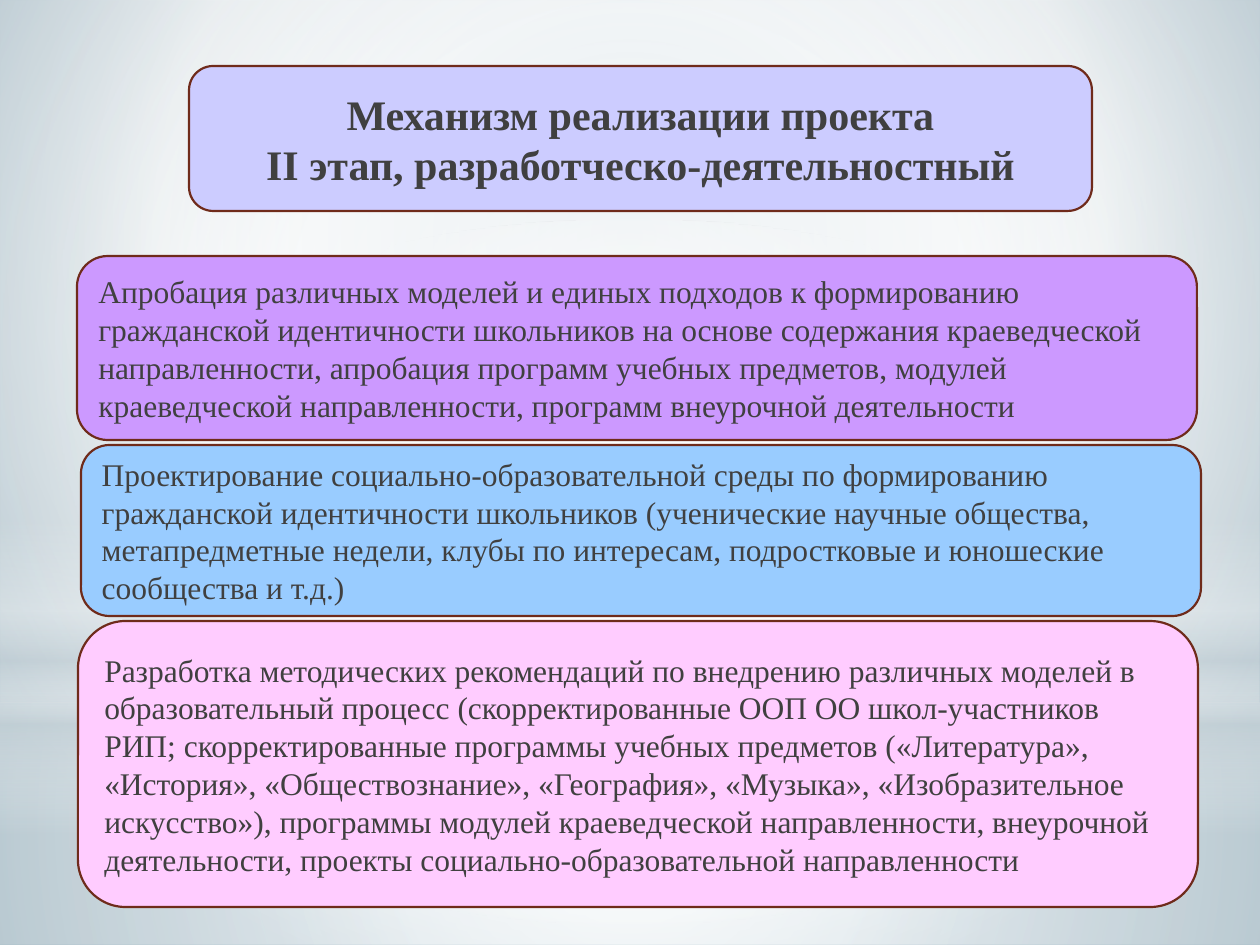
from lxml.etree import SubElement
from pptx import Presentation
from pptx.dml.color import RGBColor
from pptx.enum.shapes import MSO_SHAPE
from pptx.enum.text import MSO_ANCHOR, PP_ALIGN
from pptx.oxml.ns import qn
from pptx.util import Pt

PX = 914400 / 126
W, H = 1260, 945
FONT = "Times New Roman"
COLORS = {
    "text": "404040", "line": "6F2B1B", "title": "CCCCFF",
    "testing": "CC99FF", "design": "99CCFF", "methods": "FFCCFF",
    "white": "FFFFFF", "mist": "C5D1D7", "sky": "B8CAD3", "steel": "8FAEBD",
}
TITLE = ["Механизм реализации проекта", "II этап, разработческо-деятельностный"]
PANELS = [
    ("testing", (77, 256, 1120, 184),
     "Апробация различных моделей и единых подходов к формированию гражданской "
     "идентичности школьников на основе содержания краеведческой направленности, "
     "апробация программ учебных предметов, модулей краеведческой направленности, "
     "программ внеурочной деятельности"),
    ("design", (81, 445, 1120, 171),
     "Проектирование социально-образовательной среды по формированию гражданской "
     "идентичности школьников (ученические научные общества, метапредметные недели, "
     "клубы по интересам, подростковые и юношеские сообщества и т.д.)"),
    ("methods", (78, 621, 1120, 286),
     "Разработка методических рекомендаций по внедрению различных моделей в "
     "образовательный процесс (скорректированные ООП ОО школ-участников РИП; "
     "скорректированные программы учебных предметов («Литература», «История», "
     "«Обществознание», «География», «Музыка», «Изобразительное искусство»), "
     "программы модулей краеведческой направленности, внеурочной деятельности, "
     "проекты социально-образовательной направленности"),
]
CENTER = (50, 50, 50, 50)
# Backdrop layers: shape, box, stops (position, colour, opacity), focus or None for vertical
LAYERS = [
    (MSO_SHAPE.RECTANGLE, (0, 703, W, 242),
     [(0, "white", 91), (37, "white", 76), (100, "mist", 79)], CENTER),
    (MSO_SHAPE.RECTANGLE, (0, 0, W, 703),
     [(0, "white", 89), (48, "white", 62), (100, "mist", 79)], CENTER),
    (MSO_SHAPE.RECTANGLE, (0, 519, W, 315),
     [(0, "white", 0), (29, "white", 30), (45, "mist", 40),
      (55, "white", 26), (65, "mist", 60), (100, "white", 0)], None),
    (MSO_SHAPE.OVAL, (0, 220, W, 703),
     [(0, "white", 100), (56, "white", 0)], CENTER),
]


def px(n):
    return round(n * PX)


def rgb(name):
    return RGBColor.from_string(COLORS[name])


def set_gradient(props, stops, focus):
    """Replace the solid fill in props by a circular or vertical gradient."""
    solid = props.find(qn("a:solidFill"))
    grad = props.makeelement(qn("a:gradFill"), {"rotWithShape": "1"})
    props.replace(solid, grad)
    gs_list = SubElement(grad, qn("a:gsLst"))
    for pos, color, opacity in stops:
        gs = SubElement(gs_list, qn("a:gs"), pos=str(pos * 1000))
        clr = SubElement(gs, qn("a:srgbClr"), val=COLORS[color])
        if opacity < 100:
            SubElement(clr, qn("a:alpha"), val=str(opacity * 1000))
    if focus:
        circle = SubElement(grad, qn("a:path"))
        circle.set("path", "circle")
        sides = {k: str(v * 1000) for k, v in zip("ltrb", focus)}
        SubElement(circle, qn("a:fillToRect"), sides)
    else:
        SubElement(grad, qn("a:lin"), ang="5400000", scaled="0")


def add_backdrop(s):
    s.background.fill.solid()
    set_gradient(s.element.find(".//" + qn("p:bgPr")),
                 [(0, "sky", 100), (60, "white", 100), (100, "steel", 100)],
                 (20, 10, 20, 60))
    for kind, box, stops, focus in LAYERS:
        sp = s.shapes.add_shape(kind, *map(px, box))
        sp.shadow.inherit = False
        sp.line.fill.background()
        sp.fill.solid()
        set_gradient(sp.element.spPr, stops, focus)


def write(tf, lines, size, align, bold=False):
    tf.word_wrap = True
    tf.vertical_anchor = MSO_ANCHOR.MIDDLE
    tf.text = "\n".join(lines)
    for p in tf.paragraphs:
        p.alignment = align
        p.font.name, p.font.size, p.font.bold = FONT, Pt(size), bold
        p.font.color.rgb = rgb("text")


def add_panel(s, box, color):
    sp = s.shapes.add_shape(MSO_SHAPE.ROUNDED_RECTANGLE, *map(px, box))
    sp.shadow.inherit = False
    sp.fill.solid()
    sp.fill.fore_color.rgb = rgb(color)
    sp.line.color.rgb = rgb("line")
    sp.line.width = Pt(1.25)
    return sp


def add_title(s, box):
    add_panel(s, box, "title")
    title = s.shapes.title
    title.left, title.top, title.width, title.height = map(px, box)
    write(title.text_frame, TITLE, 24, PP_ALIGN.CENTER, bold=True)
    s.shapes.element.append(title.element)  # bring above its panel


def main():
    prs = Presentation()
    prs.slide_width, prs.slide_height = px(W), px(H)
    s = prs.slides.add_slide(prs.slide_layouts[5])
    add_backdrop(s)
    add_title(s, (189, 66, 903, 145))
    for color, box, text in PANELS:
        write(add_panel(s, box, color).text_frame, [text], 18, PP_ALIGN.LEFT)
    prs.save("out.pptx")


if __name__ == "__main__":
    main()
